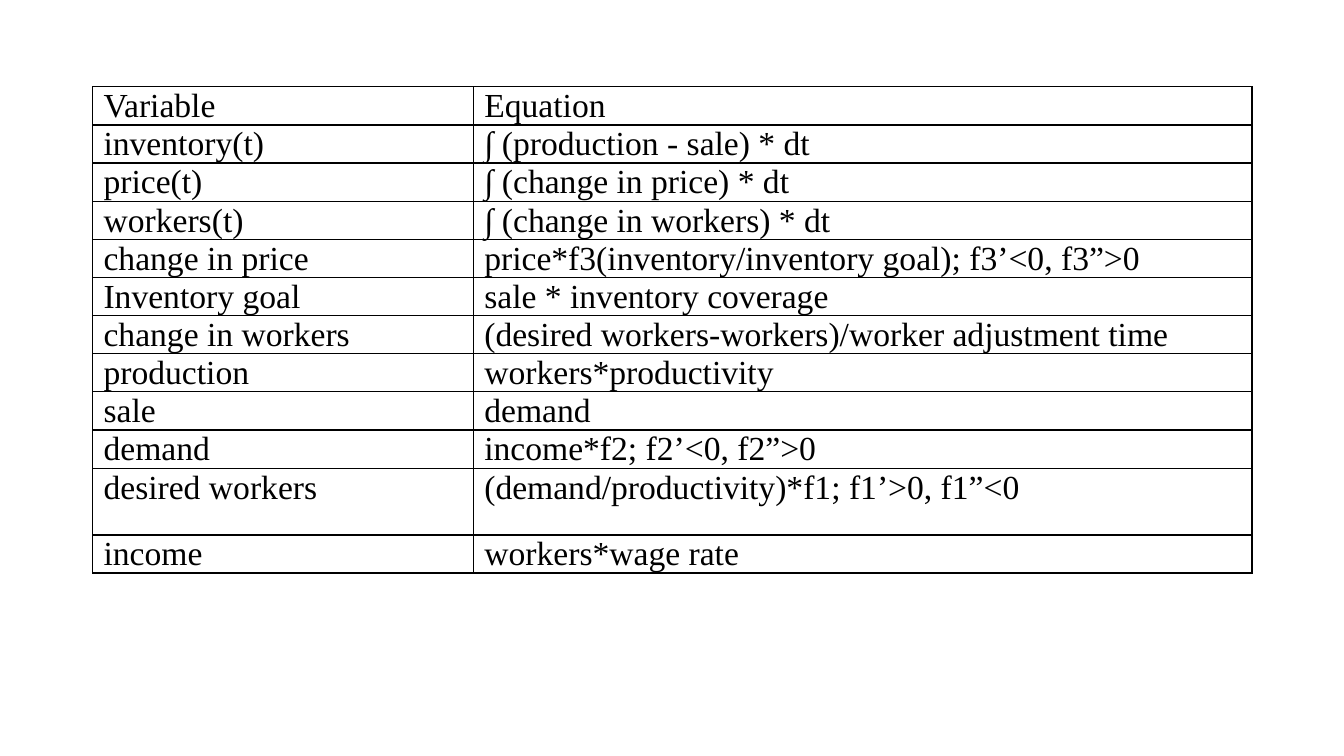
from dataclasses import dataclass

from lxml.etree import SubElement
from pptx import Presentation
from pptx.dml.color import RGBColor
from pptx.oxml.ns import qn
from pptx.util import Pt


@dataclass(frozen=True)
class Theme:
    font: str = "Times New Roman"
    size: Pt = Pt(24)
    ink: str = "000000"
    rule: Pt = Pt(1)


theme = Theme()

MODEL = [
    ("Variable", "Equation"),
    ("inventory(t)", "∫ (production - sale) * dt"),
    ("price(t)", "∫ (change in price) * dt"),
    ("workers(t)", "∫ (change in workers) * dt"),
    ("change in price", "price*f3(inventory/inventory goal); f3’<0, f3”>0"),
    ("Inventory goal", "sale * inventory coverage"),
    ("change in workers", "(desired workers-workers)/worker adjustment time"),
    ("production", "workers*productivity"),
    ("sale", "demand"),
    ("demand", "income*f2; f2’<0, f2”>0"),
    ("desired workers", "(demand/productivity)*f1; f1’>0, f1”<0"),
    ("income", "workers*wage rate"),
]
COLUMN_WIDTHS = [Pt(272), Pt(556)]
ROW_HEIGHT = Pt(26.6)
TALL_ROWS = {"desired workers": Pt(47.7)}
MARGINS = {
    "margin_left": Pt(7.7),
    "margin_right": Pt(7.7),
    "margin_top": Pt(0.7),
    "margin_bottom": Pt(0),
}
FONT_FORMAT = {"name": theme.font, "size": theme.size}


def add_borders(cell):
    properties = cell._tc.get_or_add_tcPr()
    for side in ("a:lnL", "a:lnR", "a:lnT", "a:lnB"):
        border = SubElement(properties, qn(side), w=str(int(theme.rule)))
        fill = SubElement(border, qn("a:solidFill"))
        SubElement(fill, qn("a:srgbClr"), val=theme.ink)


presentation = Presentation()
presentation.slide_width = Pt(960)
presentation.slide_height = Pt(540)
slide = presentation.slides.add_slide(presentation.slide_layouts.get_by_name("Blank"))

equations = slide.shapes.add_table(
    len(MODEL), len(COLUMN_WIDTHS), Pt(66.3), Pt(62),
    sum(COLUMN_WIDTHS), ROW_HEIGHT * len(MODEL),
).table
equations.first_row = False
equations.horz_banding = False

for column, width in zip(equations.columns, COLUMN_WIDTHS):
    column.width = width

for row, entries in zip(equations.rows, MODEL):
    row.height = TALL_ROWS.get(entries[0], ROW_HEIGHT)
    for cell, wording in zip(row.cells, entries):
        for margin, value in MARGINS.items():
            setattr(cell, margin, value)
        add_borders(cell)
        cell.fill.background()
        paragraph = cell.text_frame.paragraphs[0]
        paragraph.space_after = Pt(6)
        run = paragraph.add_run()
        run.text = wording
        for attribute, value in FONT_FORMAT.items():
            setattr(run.font, attribute, value)
        run.font.color.rgb = RGBColor.from_string(theme.ink)

presentation.save("out.pptx")
